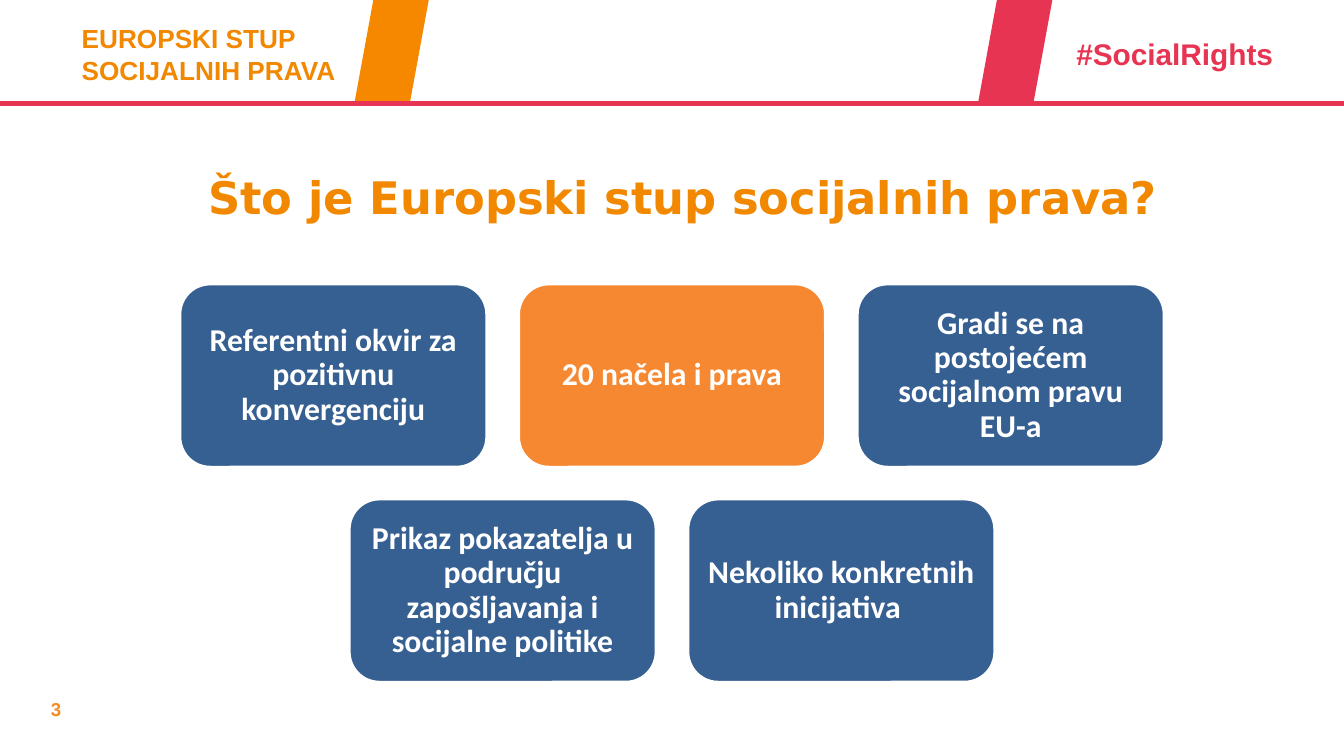
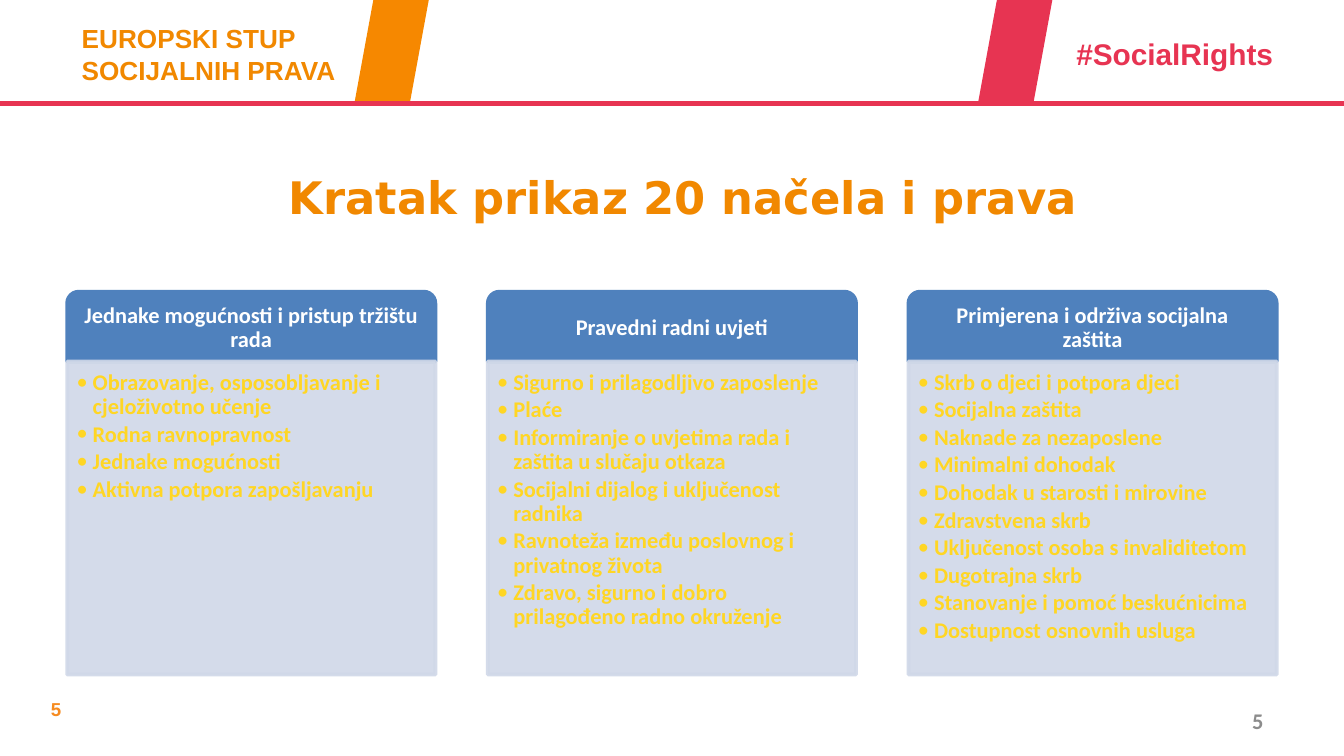
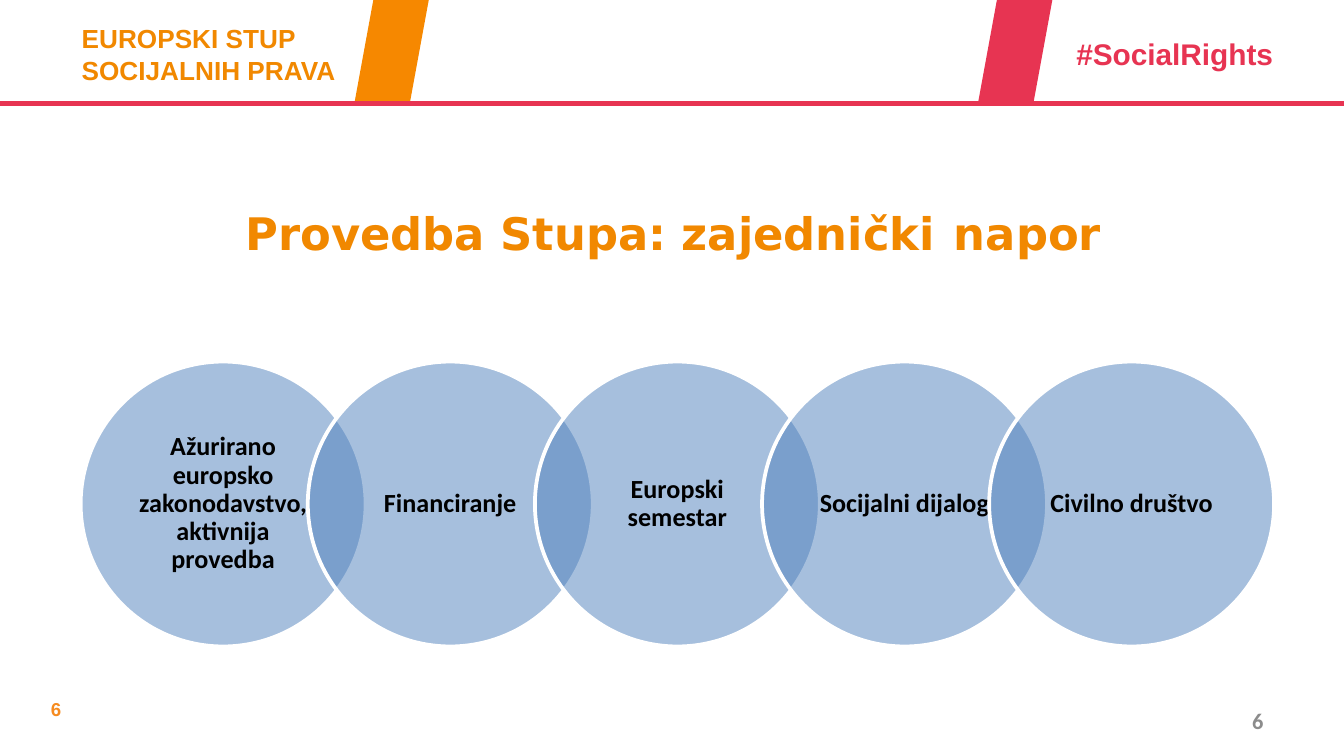
from lxml import etree
from pptx import Presentation
from pptx.dml.color import RGBColor
from pptx.enum import shapes, text
from pptx.oxml import ns
from pptx.util import Inches, Pt

ORANGE, BAND_ORANGE, NUMBER_ORANGE, TILE_ORANGE = "F18800", "F68800", "F68B20", "F68831"
RED, NAVY, BLUE, PALE_BLUE = "E73452", "376092", "4F81BD", "D0D8E8"
YELLOW, GREY, WHITE, BLACK = "FFD624", "8C8C8C", "FFFFFF", "000000"
SLIDE_WIDTH = 10
SLIDE_HEIGHT = SLIDE_WIDTH * 9 / 16
HEADER_BOX = (0, 0, SLIDE_WIDTH, 0.77)
TITLE_BOX = (0.16, 1.08, 9.84, 0.77)
LOW_TITLE_BOX = (0.51, 1.28, 9, 0.77)
LEFT, CENTER, RIGHT = text.PP_ALIGN.LEFT, text.PP_ALIGN.CENTER, text.PP_ALIGN.RIGHT
TOP, MIDDLE = text.MSO_ANCHOR.TOP, text.MSO_ANCHOR.MIDDLE
PRESET = shapes.MSO_SHAPE

TILE_ROWS = [
    [
        ("Referentni okvir za pozitivnu konvergenciju", NAVY),
        ("20 načela i prava", TILE_ORANGE),
        ("Gradi se na postojećem socijalnom pravu EU-a", NAVY),
    ],
    [
        ("Prikaz pokazatelja u području zapošljavanja i socijalne politike", NAVY),
        ("Nekoliko konkretnih inicijativa ", NAVY),
    ],
]
CHAPTERS = {
    "Jednake mogućnosti i pristup tržištu rada": [
        "Obrazovanje, osposobljavanje i cjeloživotno učenje",
        "Rodna ravnopravnost",
        "Jednake mogućnosti",
        "Aktivna potpora zapošljavanju",
    ],
    "Pravedni radni uvjeti": [
        "Sigurno i prilagodljivo zaposlenje",
        "Plaće",
        "Informiranje o uvjetima rada i zaštita u slučaju otkaza",
        "Socijalni dijalog i uključenost radnika",
        "Ravnoteža između poslovnog i privatnog života",
        "Zdravo, sigurno i dobro prilagođeno radno okruženje",
    ],
    "Primjerena i održiva socijalna zaštita": [
        "Skrb o djeci i potpora djeci",
        "Socijalna zaštita",
        "Naknade za nezaposlene",
        "Minimalni dohodak",
        "Dohodak u starosti i mirovine",
        "Zdravstvena skrb",
        "Uključenost osoba s invaliditetom",
        "Dugotrajna skrb",
        "Stanovanje i pomoć beskućnicima",
        "Dostupnost osnovnih usluga",
    ],
}
EFFORTS = [
    "Ažurirano europsko zakonodavstvo, aktivnija provedba",
    "Financiranje",
    "Europski semestar",
    "Socijalni dijalog",
    "Civilno društvo",
]


def color(value):
    """Turn a hex string into a colour."""
    return RGBColor.from_string(value)


def inches(box):
    """Turn a box of plain numbers into lengths."""
    return [Inches(value) for value in box]


def row_lefts(center, count, width, gap):
    """Return the left edges of equal items centred in a row."""
    left = center - (count * width + (count - 1) * gap) / 2
    return [left + index * (width + gap) for index in range(count)]


def set_font(font, size, value, name="Calibri"):
    """Style the font of a paragraph or run."""
    font.name, font.size, font.bold = name, Pt(size), True
    font.color.rgb = color(value)


def set_frame(frame, anchor, insets):
    """Set wrapping, vertical anchor and inner margins of a text frame."""
    frame.word_wrap = True
    frame.vertical_anchor = anchor
    frame.margin_left, frame.margin_top, frame.margin_right, frame.margin_bottom = inches(insets)


def add_label(slide, box, content, size, value, name="Arial", align=LEFT, anchor=TOP):
    """Add a text box holding one styled paragraph and return its frame."""
    frame = slide.shapes.add_textbox(*inches(box)).text_frame
    set_frame(frame, anchor, (0.1, 0.05, 0.1, 0.05))
    paragraph = frame.paragraphs[0]
    paragraph.text = content
    paragraph.alignment = align
    set_font(paragraph.font, size, value, name)
    return frame


def add_block(slide, preset, box, fill, line=None, opacity=100):
    """Add a filled preset shape, outlined if a line colour is given."""
    shape = slide.shapes.add_shape(preset, *inches(box))
    shape.shadow.inherit = False
    shape.fill.solid()
    shape.fill.fore_color.rgb = color(fill)
    if line:
        shape.line.color.rgb = color(line)
        shape.line.width = Pt(2)
    else:
        shape.line.fill.background()
    if opacity < 100:
        for element in shape.element.spPr.iter(ns.qn("a:srgbClr")):
            if element.get("val") == fill:
                etree.SubElement(element, ns.qn("a:alpha"), val=str(opacity * 1000))
    return shape


def write_caption(shape, content, size, value, insets):
    """Write a centred caption inside a shape."""
    set_frame(shape.text_frame, MIDDLE, insets)
    paragraph = shape.text_frame.paragraphs[0]
    paragraph.text = content
    paragraph.alignment = CENTER
    paragraph.line_spacing = 0.9
    set_font(paragraph.font, size, value)


def write_bullets(shape, items):
    """Write a bulleted list inside a shape."""
    frame = shape.text_frame
    set_frame(frame, TOP, (0.07, 0.07, 0.09, 0.1))
    for index, item in enumerate(items):
        paragraph = frame.add_paragraph() if index else frame.paragraphs[0]
        paragraph.text = item
        paragraph.level = 1
        paragraph.alignment = LEFT
        paragraph.line_spacing = 0.9
        paragraph.space_after = Pt(1.8)
        properties = paragraph._p.get_or_add_pPr()
        properties.set("marL", str(Inches(0.12)))
        properties.set("indent", str(Inches(-0.12)))
        etree.SubElement(properties, ns.qn("a:buFont"), typeface="Calibri")
        etree.SubElement(properties, ns.qn("a:buChar"), char="•")
        set_font(paragraph.font, 12, YELLOW)


def add_header(slide, box):
    """Add the header band with its rule, labels and slanted bars."""
    left, top, width, height = box
    bottom = top + height
    labels = [
        ((left + 0.51, top + 0.12, 2.54, 0.57), "EUROPSKI STUP\vSOCIJALNIH PRAVA", 14, ORANGE),
        ((left + 7.91, top + 0.22, 1.73, 0.37), "#SocialRights", 16, RED),
    ]
    for label in labels:
        add_label(slide, *label).auto_size = text.MSO_AUTO_SIZE.SHAPE_TO_FIT_TEXT
    rule = slide.shapes.add_connector(
        shapes.MSO_CONNECTOR.STRAIGHT, *inches((left, bottom, left + width, bottom)))
    rule.line.color.rgb = color(RED)
    rule.line.width = Pt(2.25)
    etree.SubElement(rule._element.spPr, ns.qn("a:effectLst"))
    for offset, fill in ((2.64, BAND_ORANGE), (7.28, RED)):
        add_block(slide, PRESET.PARALLELOGRAM, (left + offset, top, 0.55, 0.75), fill)


def add_title(slide, box, content):
    """Add the slide title and return its paragraph."""
    frame = add_label(slide, box, content, 24, ORANGE, "DejaVu Sans", CENTER, MIDDLE)
    return frame.paragraphs[0]


def start_slide(presentation, number, second_number=False):
    """Add a slide with the shared header and page numbers."""
    slide = presentation.slides.add_slide(presentation.slide_layouts[6])
    add_label(slide, (0.28, 5.14, 2.18, 0.27), str(number), 10, NUMBER_ORANGE)
    add_header(slide, HEADER_BOX)
    if second_number:
        add_label(slide, (7.17, 5.21, 2.33, 0.3), str(number), 12, GREY, "Calibri", RIGHT, MIDDLE)
    return slide


def add_tiles(slide, center, top):
    """Add centred rows of rounded tiles."""
    width, height, gap = 2.29, 1.37, 0.23
    for index, row in enumerate(TILE_ROWS):
        row_top = top + index * (height + gap)
        for left, (caption, fill) in zip(row_lefts(center, len(row), width, gap), row):
            tile = add_block(slide, PRESET.ROUNDED_RECTANGLE, (left, row_top, width, height), fill, WHITE)
            write_caption(tile, caption, 17, WHITE, (0.07, 0.07, 0.07, 0.07))


def add_chapter(slide, box, heading, items):
    """Add a column with a heading tab above a bulleted panel."""
    left, top, width, height = box
    tab_height = 0.52
    tab = add_block(slide, PRESET.ROUND_2_SAME_RECTANGLE, (left, top, width, tab_height), BLUE, BLUE)
    write_caption(tab, heading, 12, WHITE, (0.09, 0.05, 0.09, 0.05))
    panel_box = (left, top + tab_height, width, height - tab_height)
    panel = add_block(slide, PRESET.RECTANGLE, panel_box, PALE_BLUE, PALE_BLUE, 90)
    write_bullets(panel, items)


def add_circles(slide, center, top):
    """Add a row of overlapping translucent circles."""
    size = 2.12
    for left, caption in zip(row_lefts(center, len(EFFORTS), size, -0.43), EFFORTS):
        circle = add_block(slide, PRESET.OVAL, (left, top, size, size), BLUE, WHITE, 50)
        write_caption(circle, caption, 14, BLACK, (0.11, 0.02, 0.11, 0.02))


def build_definition_slide(presentation):
    """Build the slide that says what the pillar is."""
    slide = start_slide(presentation, 3)
    add_title(slide, TITLE_BOX, "Što je Europski stup socijalnih prava?")
    add_tiles(slide, SLIDE_WIDTH / 2, 2.11)


def build_principles_slide(presentation):
    """Build the slide that lists the principles by chapter."""
    slide = start_slide(presentation, 5, True)
    add_title(slide, TITLE_BOX, "Kratak prikaz 20 načela i prava")
    width = 2.74
    lefts = row_lefts(SLIDE_WIDTH / 2, len(CHAPTERS), width, 0.39)
    for left, (heading, items) in zip(lefts, CHAPTERS.items()):
        add_chapter(slide, (left, 2.17, width, 2.85), heading, items)


def build_delivery_slide(presentation):
    """Build the slide on the joint effort."""
    slide = start_slide(presentation, 6, True)
    title = add_title(slide, LOW_TITLE_BOX, "Provedba Stupa: zajednički")
    for content, size, name in ((" ", 36, "Arial"), ("napor", 24, "DejaVu Sans")):
        run = title.add_run()
        run.text = content
        set_font(run.font, size, ORANGE, name)
    add_circles(slide, 5.04, 2.69)


def main():
    """Build and save the presentation."""
    presentation = Presentation()
    presentation.slide_width = Inches(SLIDE_WIDTH)
    presentation.slide_height = Inches(SLIDE_HEIGHT)
    build_definition_slide(presentation)
    build_principles_slide(presentation)
    build_delivery_slide(presentation)
    presentation.save("out.pptx")


if __name__ == "__main__":
    main()
